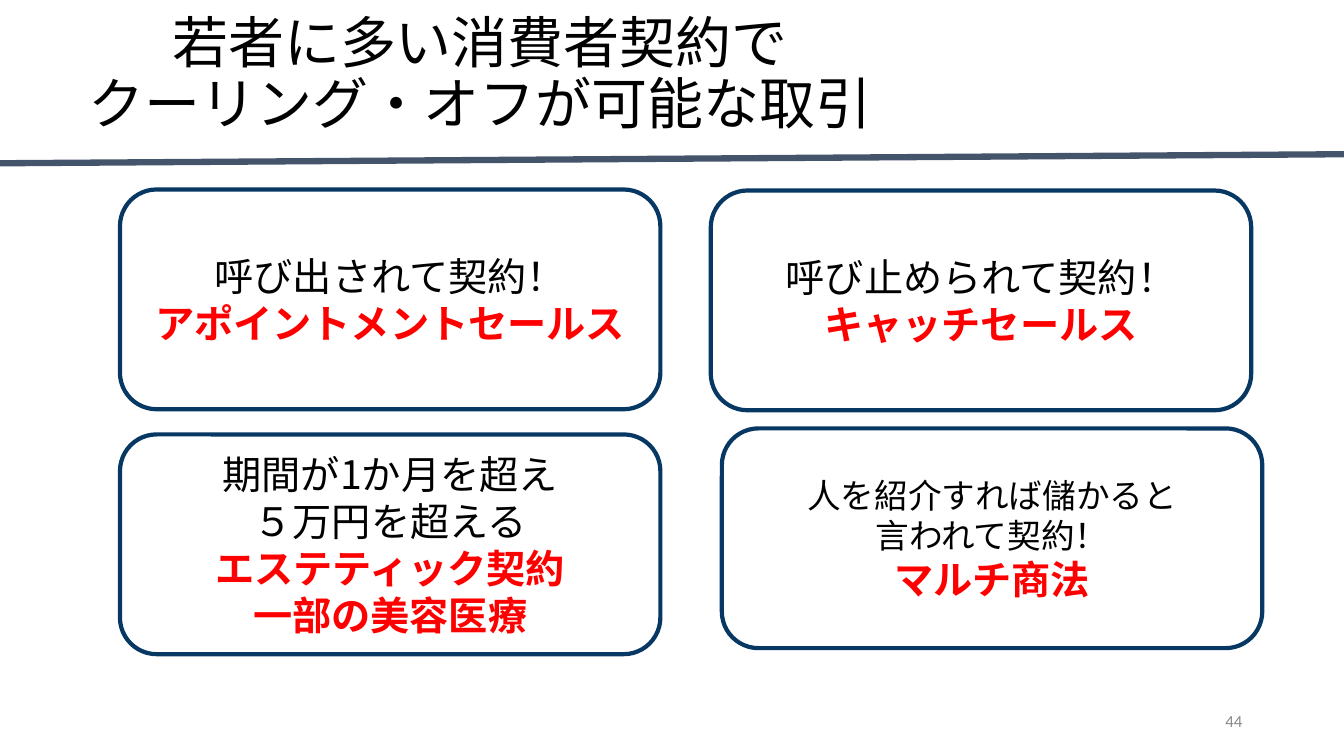
from dataclasses import dataclass

from lxml.etree import SubElement
from pptx import Presentation
from pptx.dml.color import RGBColor
from pptx.enum.shapes import MSO_CONNECTOR as Link, MSO_SHAPE as Shape
from pptx.enum.text import MSO_ANCHOR as Anchor, PP_ALIGN as Align
from pptx.oxml.ns import qn
from pptx.slide import Slide
from pptx.text.text import TextFrame
from pptx.util import Inches, Pt

GOTHIC = "Noto Sans CJK JP"
BLACK, RED, NAVY, SLATE, GRAY = "000000", "FF0000", "073763", "44546A", "888888"
BOX_W, BOX_H = 5.36, 2.18


@dataclass
class Line:
    text: str
    size: float = 28
    color: str = BLACK
    bold: bool = False
    font: str = GOTHIC


@dataclass
class Card:
    left: float
    top: float
    lines: list[Line]


def rgb(code: str) -> RGBColor:
    return RGBColor.from_string(code)


def key(text: str) -> Line:
    """Emphasised name of a sales method."""
    return Line(text, color=RED, bold=True)


def write(frame: TextFrame, lines: list[Line], align: Align = Align.CENTER,
          inset: float = 0.05, spacing: float = 1.0) -> None:
    frame.word_wrap = True
    frame.vertical_anchor = Anchor.MIDDLE
    frame.margin_left = frame.margin_right = Inches(0.1)
    frame.margin_top = frame.margin_bottom = Inches(inset)
    frame.text = "\n".join(line.text for line in lines)
    for para, line in zip(frame.paragraphs, lines):
        para.alignment = align
        para.line_spacing = spacing
        for run in para.runs:
            font = run.font
            font.name, font.size, font.bold = line.font, Pt(line.size), line.bold
            font.color.rgb = rgb(line.color)
            SubElement(font._element, qn("a:ea"), typeface=line.font)


def add_text(slide: Slide, left: float, top: float, width: float,
             height: float) -> TextFrame:
    return slide.shapes.add_textbox(
        Inches(left), Inches(top), Inches(width), Inches(height)).text_frame


def add_card(slide: Slide, card: Card) -> None:
    box = slide.shapes.add_shape(
        Shape.FLOWCHART_ALTERNATE_PROCESS, Inches(card.left), Inches(card.top),
        Inches(BOX_W), Inches(BOX_H))
    box.shadow.inherit = False
    box.fill.solid()
    box.fill.fore_color.rgb = rgb("FFFFFF")
    box.line.color.rgb = rgb(NAVY)
    box.line.width = Pt(3)
    write(box.text_frame, card.lines, inset=0.1)


def add_rule(slide: Slide) -> None:
    rule = slide.shapes.add_connector(
        Link.STRAIGHT, Inches(0), Inches(1.62), Inches(13.33), Inches(1.53))
    rule.line.color.rgb = rgb(SLATE)
    rule.line.width = Pt(4.5)
    SubElement(rule._element.spPr, qn("a:effectLst"))


CARDS = [
    Card(1.19, 4.31, [Line("期間が1か月を超え"), Line("５万円を超える"),
                      key("エステティック契約"), key("一部の美容医療")]),
    Card(7.05, 1.89, [Line("呼び止められて契約！"), key("キャッチセールス")]),
    Card(1.19, 1.88, [Line("呼び出されて契約！"), key("アポイントメントセールス")]),
    Card(7.16, 4.25, [Line("人を紹介すれば儲かると", 24),
                      Line("言われて契約！", 24), key("マルチ商法")]),
]


def main() -> None:
    deck = Presentation()
    deck.slide_width, deck.slide_height = Inches(13.33), Inches(7.5)
    slide = deck.slides.add_slide(deck.slide_layouts[6])
    title = [Line("若者に多い消費者契約で", 40),
             Line("クーリング・オフが可能な取引", 40)]
    write(add_text(slide, 0.1, 0.14, 9.32, 1.23), title, spacing=0.9)
    for card in CARDS:
        add_card(slide, card)
    number = Line("44", 12, GRAY, font="Calibri")
    write(add_text(slide, 9.42, 6.95, 3, 0.4), [number], Align.RIGHT)
    add_rule(slide)
    deck.save("out.pptx")


if __name__ == "__main__":
    main()
